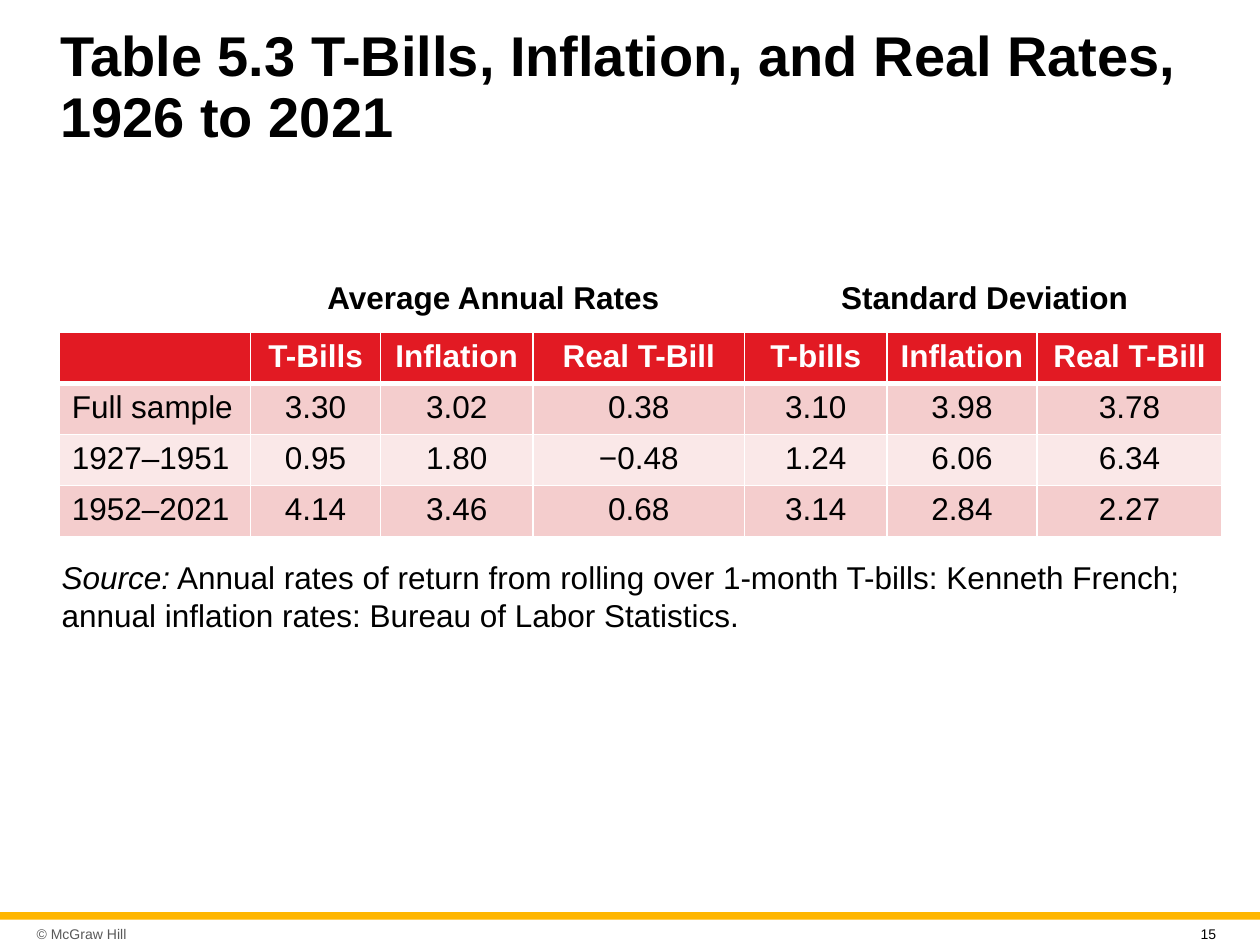
from lxml import etree
from pptx import Presentation
from pptx import util as u
from pptx.dml.color import RGBColor
from pptx.enum import shapes, text
from pptx.oxml.ns import qn

HUES = {"ink": "000000", "paper": "FFFFFF", "gray": "595959", "gold": "FFB600",
        "red": "E21A23", "rose": "F4CDCD", "blush": "FAE8E8"}
MID = text.PP_ALIGN.CENTER
HEADS = ["", "T-Bills", "Inflation", "Real T-Bill", "T-bills", "Inflation", "Real T-Bill"]
ROWS = [
    ["Full sample", "3.30", "3.02", "0.38", "3.10", "3.98", "3.78"],
    ["1927–1951", "0.95", "1.80", "−0.48", "1.24", "6.06", "6.34"],
    ["1952–2021", "4.14", "3.46", "0.68", "3.14", "2.84", "2.27"],
]
WIDTHS = [1.52, 1.03, 1.21, 1.68, 1.13, 1.19, 1.47]


def tint(name):
    return RGBColor.from_string(HUES[name])


def write(frame, words, size=18, hue="ink", bold=False, align=None, lead=None, slant=""):
    """Fill a text frame with one paragraph; slant is an italic opening."""
    para = frame.paragraphs[0]
    para.alignment = align
    para.line_spacing = lead
    for part, italic in ((slant, True), (words, False)):
        if part:
            run = para.add_run()
            run.text = part
            font = run.font
            font.name, font.size = "Arial", u.Pt(size)
            font.bold, font.italic = bold, italic
            font.color.rgb = tint(hue)


def edge(cell, base):
    """Draw white borders round a cell, with the bottom one base points wide."""
    props = cell._tc.get_or_add_tcPr()
    for spot, (side, width) in enumerate((("L", 1), ("R", 1), ("T", 1), ("B", base))):
        line = etree.Element(qn(f"a:ln{side}"), w=str(u.Pt(width)))
        fill = etree.SubElement(line, qn("a:solidFill"))
        etree.SubElement(fill, qn("a:srgbClr"), val=HUES["paper"])
        props.insert(spot, line)


class Deck:
    def __init__(self):
        self.show = Presentation()
        self.show.slide_width, self.show.slide_height = u.Inches(10), u.Inches(7.5)
        self.slide = self.show.slides.add_slide(self.show.slide_layouts[6])

    def bar(self, box, hue):
        bar = self.slide.shapes.add_shape(shapes.MSO_SHAPE.RECTANGLE, *map(u.Inches, box))
        bar.shadow.inherit = False
        bar.fill.solid()
        bar.fill.fore_color.rgb = tint(hue)
        bar.line.fill.background()

    def label(self, box, words, middle=False, inset=None, **form):
        frame = self.slide.shapes.add_textbox(*map(u.Inches, box)).text_frame
        frame.word_wrap = True
        if middle:
            frame.vertical_anchor = text.MSO_ANCHOR.MIDDLE
        if inset is not None:
            frame.margin_left = frame.margin_right = u.Inches(inset)
            frame.margin_top = frame.margin_bottom = u.Inches(inset)
        write(frame, words, **form)

    def table(self, left, top, tall, widths, rows):
        box = map(u.Inches, (left, top, sum(widths), tall))
        grid = self.slide.shapes.add_table(len(rows), len(widths), *box).table
        for col, width in zip(grid.columns, widths):
            col.width = u.Inches(width)
        for r, row in enumerate(rows):
            grid.rows[r].height = u.Inches(tall / len(rows))
            head = r == 0
            hue = "red" if head else ("blush", "rose")[r % 2]
            for c, words in enumerate(row):
                cell = grid.cell(r, c)
                cell.fill.solid()
                cell.fill.fore_color.rgb = tint(hue)
                edge(cell, 3 if head else 1)
                write(cell.text_frame, words, bold=head, hue="paper" if head else "ink",
                      align=MID if c else None)


def main():
    deck = Deck()
    deck.bar((0, 7.24, 10, 0.06), "gold")
    deck.label((0.24, 7.29, 1.35, 0.24), "© McGraw Hill", middle=True, inset=0.05,
               size=8, hue="gray")
    deck.label((0.38, 0.21, 9.25, 0.99),
               "Table 5.3 T-Bills, Inflation, and Real Rates, 1926 to 2021",
               middle=True, size=32, bold=True, lead=0.9)
    deck.label((1.99, 2.16, 3.85, 0.4), "Average Annual Rates", bold=True, align=MID)
    deck.label((5.93, 2.16, 3.77, 0.4), "Standard Deviation", bold=True, align=MID)
    deck.table(0.47, 2.64, 1.62, WIDTHS, [HEADS] + ROWS)
    deck.label((0.39, 4.38, 9.25, 0.69),
               " Annual rates of return from rolling over 1-month T-bills: Kenneth French; "
               "annual inflation rates: Bureau of Labor Statistics.", slant="Source:")
    deck.label((9.43, 7.3, 0.39, 0.18), "15", size=8)
    deck.show.save("out.pptx")


if __name__ == "__main__":
    main()
